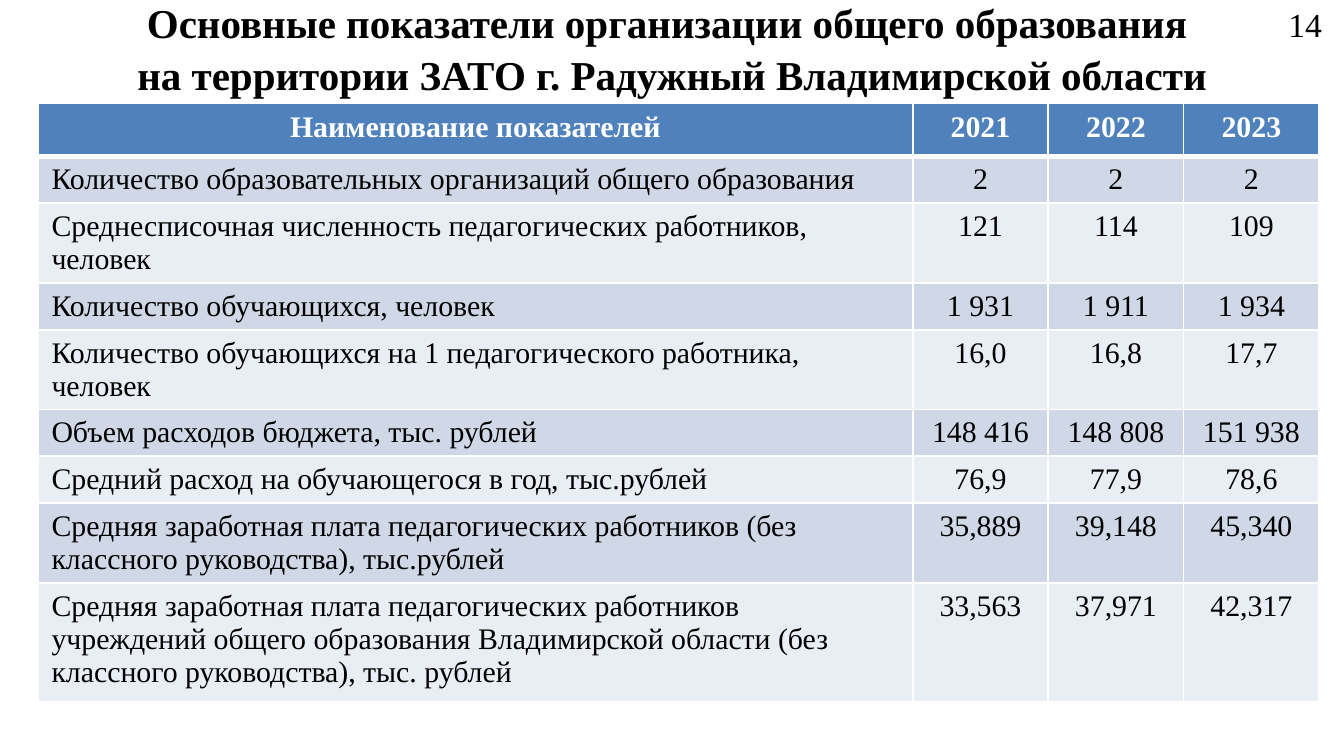
from pptx import Presentation
from pptx.dml.color import RGBColor as RGB
from pptx.enum.text import MSO_ANCHOR as Anchor, MSO_AUTO_SIZE as Auto, PP_ALIGN as Align
from pptx.oxml import parse_xml
from pptx.oxml.ns import nsdecls
from pptx.util import Cm, Pt


def style(par, size, color="000000", bold=False, align=Align.CENTER):
    par.alignment = align
    font = par.font
    font.name, font.size, font.bold = "Times New Roman", Pt(size), bold
    font.color.rgb = RGB.from_string(color)


def edge(cell, side, width):
    cell._tc.get_or_add_tcPr().append(parse_xml(
        f'<a:ln{side} {nsdecls("a")} w="{Pt(width)}"><a:solidFill>'
        f'<a:srgbClr val="FFFFFF"/></a:solidFill></a:ln{side}>'))


data = [
    (1, "Наименование показателей", "2021", "2022", "2023"),
    (0.88, "Количество образовательных организаций общего образования", "2", "2", "2"),
    (1.5, "Среднесписочная численность педагогических работников, человек", "121", "114", "109"),
    (0.88, "Количество обучающихся, человек", "1 931", "1 911", "1 934"),
    (1.5, "Количество обучающихся на 1 педагогического работника, человек", "16,0", "16,8", "17,7"),
    (0.88, "Объем расходов бюджета, тыс. рублей", "148 416", "148 808", "151 938"),
    (0.88, "Средний расход на обучающегося в год, тыс.рублей", "76,9", "77,9", "78,6"),
    (1.5, "Средняя заработная плата педагогических работников (без классного руководства), "
     "тыс.рублей", "35,889", "39,148", "45,340"),
    (2.25, "Средняя заработная плата педагогических работников учреждений общего образования "
     "Владимирской области (без классного руководства), тыс. рублей", "33,563", "37,971", "42,317"),
]

deck = Presentation()
deck.slide_width, deck.slide_height = Cm(25.4), Cm(14.29)
slide = deck.slides.add_slide(deck.slide_layouts[5])

title = slide.shapes.title
title.left, title.top, title.width, title.height = Cm(0), Cm(0), Cm(25.4), Cm(1.75)
frame = title.text_frame
frame.text = "Основные показатели организации общего образования \vна территории ЗАТО г. Радужный Владимирской области"
frame.auto_size = Auto.NONE
frame.vertical_anchor = Anchor.MIDDLE
head = frame.paragraphs[0]
style(head, 22, bold=True)
head.line_spacing = 1.07

total = sum(line[0] for line in data)
table = slide.shapes.add_table(
    len(data), 4, Cm(0.72), Cm(1.96), Cm(24.21), Cm(total)).table
for col, width in zip(table.columns, (16.53, 2.56, 2.56, 2.56)):
    col.width = Cm(width)
for row, (height, *texts) in enumerate(data):
    table.rows[row].height = Cm(height)
    top = row == 0
    fill = "4F81BD" if top else ("E9EDF4", "D0D8E8")[row % 2]
    for col, text in enumerate(texts):
        cell = table.cell(row, col)
        cell.text = text
        style(cell.text_frame.paragraphs[0], 16, "FFFFFF" if top else "000000", top,
              Align.CENTER if top or col else Align.LEFT)
        for side in "LRTB":
            thick = (top and side == "B") or (row == 1 and side == "T")
            edge(cell, side, 3 if thick else 1)
        cell.fill.solid()
        cell.fill.fore_color.rgb = RGB.from_string(fill)

page = slide.shapes.add_textbox(Cm(24.1), Cm(-0.05), Cm(1.3), Cm(1.02)).text_frame
page.word_wrap = True
page.text = "14"
style(page.paragraphs[0], 18, align=Align.LEFT)

deck.save("out.pptx")
